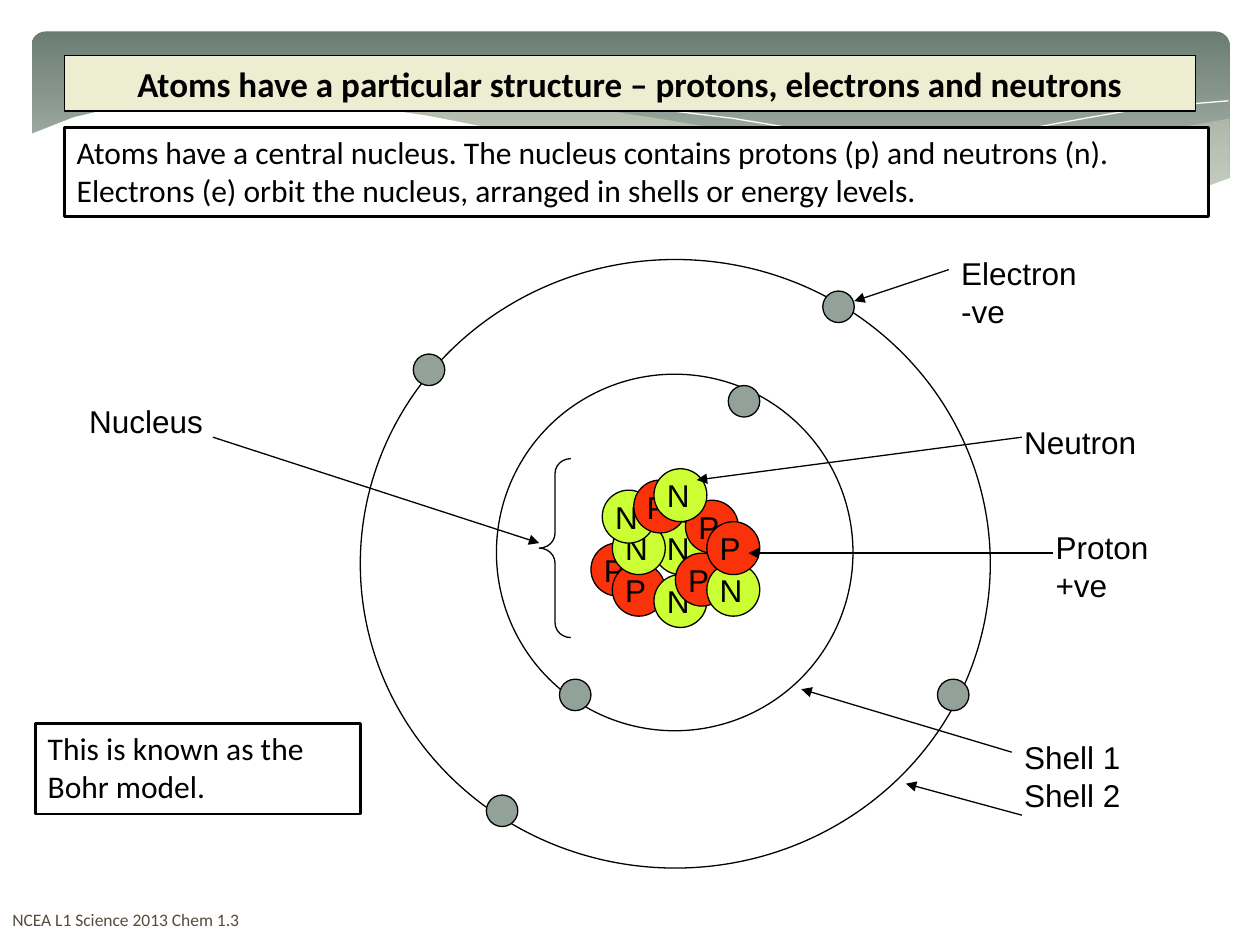
from lxml import etree
from pptx import Presentation
from pptx import util as u
from pptx.dml.color import RGBColor
from pptx.enum import shapes, text
from pptx.oxml import parse_xml
from pptx.oxml.ns import qn

Inches, Pt = u.Inches, u.Pt
KIND = shapes.MSO_SHAPE
BLACK, WHITE, CREAM = "000000", "FFFFFF", "ECEDD1"
RED, LIME, GREY = "FA320A", "CCFF33", "93A299"


def style(shape, fill=None, line=None, width=0.75):
    """Set fill and line by hex colour, None for neither."""
    shape.shadow.inherit = False
    for part, tone in ((shape.fill, fill), (shape.line.fill, line)):
        if tone:
            part.solid()
            part.fore_color.rgb = RGBColor.from_string(tone)
        else:
            part.background()
    if line:
        shape.line.width = Pt(width)


def write(shape, words, size=18, font="Calibri", tone=BLACK,
          align=text.PP_ALIGN.LEFT, anchor=text.MSO_ANCHOR.TOP, bold=False):
    frame = shape.text_frame
    frame.word_wrap = True
    frame.vertical_anchor = anchor
    frame.text = words
    for para in frame.paragraphs:
        para.alignment = align
        para.font.size = Pt(size)
        para.font.name = font
        para.font.bold = bold
        para.font.color.rgb = RGBColor.from_string(tone)


deck = Presentation()
deck.slide_width, deck.slide_height = Inches(10), Inches(7.5)
slide = deck.slides.add_slide(deck.slide_layouts[5])
items = slide.shapes

# Header band with waves
band = items.add_shape(KIND.ROUNDED_RECTANGLE, Inches(0.25), Inches(0.25),
                       Inches(9.51), Inches(1.56))
band.adjustments[0] = 0.071
style(band)
band.fill.gradient()
band.fill.gradient_angle = 270
for stop, (place, tone) in zip(band.fill.gradient_stops,
                               ((0, "6B7D72"), (0.9, "BEC7C2"))):
    stop.position = place
    stop.color.rgb = RGBColor.from_string(tone)

# Points, fill, line, opacity in percent
waves = [
    ([(9.76, 0.94), (9.48, 0.99), (9.21, 1.04), (8.91, 1.1), (8.61, 1.18),
      (8.05, 1.31), (7.53, 1.43), (7.06, 1.52), (6.61, 1.6), (6.91, 1.64),
      (7.32, 1.68), (7.69, 1.71), (8.03, 1.72), (8.35, 1.72), (8.63, 1.7),
      (8.89, 1.66), (9.13, 1.62), (9.35, 1.56), (9.63, 1.47), (9.76, 1.41)],
     CREAM, None, 29),
    ([(8.93, 1.67), (8.66, 1.64), (8.07, 1.54), (7.41, 1.42), (6.68, 1.26),
      (6.13, 1.12), (5.69, 1.02), (5.28, 0.95), (4.89, 0.89), (4.42, 0.83),
      (3.99, 0.8), (3.61, 0.8), (3.28, 0.81), (2.86, 0.86), (3.23, 0.9),
      (3.62, 0.97), (4.04, 1.06), (4.49, 1.16), (5.3, 1.35), (5.84, 1.46),
      (6.34, 1.56), (6.8, 1.63), (7.22, 1.68), (7.61, 1.71), (7.96, 1.73),
      (8.28, 1.73), (8.57, 1.71)],
     CREAM, None, 40),
    ([(3.09, 0.9), (3.28, 0.86), (3.53, 0.84), (3.87, 0.82), (4.16, 0.81),
      (4.5, 0.82), (4.89, 0.84), (5.33, 0.88), (5.82, 0.94), (6.36, 1.03),
      (6.95, 1.14), (7.6, 1.28), (8.31, 1.45), (9.07, 1.66)],
     None, WHITE, 100),
    ([(6.13, 1.51), (6.53, 1.41), (6.95, 1.3), (7.48, 1.17), (8.06, 1.04),
      (8.66, 0.93), (8.95, 0.88), (9.24, 0.84), (9.51, 0.82), (9.75, 0.8)],
     None, WHITE, 100),
    ([(9.77, 1.41), (9.5, 1.51), (9.2, 1.59), (8.87, 1.66), (8.5, 1.7),
      (8.09, 1.71), (7.61, 1.7), (7.08, 1.65), (6.48, 1.56), (5.79, 1.44),
      (5.03, 1.28), (4.47, 1.14), (3.91, 1.02), (3.4, 0.92), (2.92, 0.85),
      (2.5, 0.81), (2.11, 0.78), (1.77, 0.78), (1.46, 0.79), (1.19, 0.82),
      (0.95, 0.85), (0.76, 0.89), (0.59, 0.93), (0.46, 0.98), (0.36, 1.02),
      (0.23, 1.07), (0.23, 2.24), (9.77, 2.24)],
     WHITE, None, 100),
]
for points, fill, line, share in waves:
    dots = [(Inches(x), Inches(y)) for x, y in points]
    path = items.build_freeform(*dots[0])
    path.add_line_segments(dots[1:], close=fill is not None)
    wave = path.convert_to_shape()
    style(wave, fill, line, 0)
    if share < 100:
        tint = wave.fill._xPr.find(qn("a:solidFill"))[0]
        etree.SubElement(tint, qn("a:alpha")).set("val", str(share * 1000))

# Title, brought in front of the band
title = items.title
items.element.append(title.element)
title.left, title.top = Inches(0.51), Inches(0.44)
title.width, title.height = Inches(8.98), Inches(0.44)
style(title, CREAM, BLACK)
write(title, "Atoms have a particular structure – protons, electrons and neutrons",
      20, align=text.PP_ALIGN.CENTER, anchor=text.MSO_ANCHOR.MIDDLE, bold=True)

# Framed notes
for x, y, w, h, fill, words in (
    (0.28, 5.74, 2.58, 0.72, None, "This is known as the Bohr model."),
    (0.51, 1.01, 9.08, 0.71, WHITE,
     "Atoms have a central nucleus. The nucleus contains protons (p) and "
     "neutrons (n). Electrons (e) orbit the nucleus, arranged in shells or "
     "energy levels."),
):
    note = items.add_shape(KIND.RECTANGLE, Inches(x), Inches(y), Inches(w), Inches(h))
    style(note, fill, BLACK, 1.5)
    write(note, words)

# Nucleus, from back to front
for sign, x, y in (
    ("P", 4.69, 4.31), ("P", 4.86, 4.47), ("N", 5.19, 4.14), ("N", 5.19, 4.56),
    ("N", 4.86, 4.14), ("P", 5.36, 4.39), ("N", 4.78, 3.89), ("P", 5.03, 3.81),
    ("P", 5.44, 3.97), ("N", 5.61, 4.47), ("N", 5.19, 3.72), ("P", 5.61, 4.14),
):
    ball = items.add_shape(KIND.OVAL, Inches(x), Inches(y), Inches(0.42), Inches(0.42))
    style(ball, RED if sign == "P" else LIME, BLACK)
    write(ball, sign, font="Arial")
    frame = ball.text_frame
    frame.word_wrap = False
    frame.margin_left = Inches(0.04)
    frame.margin_top = frame.margin_right = frame.margin_bottom = 0

# Shells, then electrons
rings = [(3.94, 2.97, 2.83, 2.83, None), (2.86, 2.06, 5, 4.83, None)]
rings += [(x, y, 0.25, 0.25, GREY) for x, y in (
    (5.78, 3.06), (4.44, 5.39), (6.53, 2.31),
    (3.86, 6.31), (3.28, 2.81), (7.44, 5.39))]
for x, y, w, h, fill in rings:
    ring = items.add_shape(KIND.OVAL, Inches(x), Inches(y), Inches(w), Inches(h))
    style(ring, fill, BLACK)

brace = items.add_shape(KIND.LEFT_BRACE, Inches(4.28), Inches(3.64),
                        Inches(0.25), Inches(1.42))
brace.adjustments[0] = 0.472
style(brace, None, BLACK)

# Labels and their arrows
for words, x, y, w, h in (
    ("Electron -ve", 7.53, 1.97, 1.42, 0.7),
    ("Nucleus", 0.61, 3.14, 1.83, 0.4),
    ("Neutron", 8.03, 3.31, 1.25, 0.4),
    ("Proton +ve", 8.28, 4.14, 1.17, 0.7),
    ("Shell 1\nShell 2", 8.03, 5.81, 1.5, 0.85),
):
    label = items.add_textbox(Inches(x), Inches(y), Inches(w), Inches(h))
    write(label, words, font="Arial")

for ends in (
    (7.53, 2.14, 6.78, 2.39), (1.69, 3.47, 4.28, 4.31), (8.11, 3.47, 5.53, 3.81),
    (8.36, 4.39, 5.94, 4.39), (8.03, 5.97, 6.36, 5.47), (8.11, 6.47, 7.19, 6.22),
):
    arrow = items.add_connector(shapes.MSO_CONNECTOR.STRAIGHT, *map(Inches, ends))
    arrow.line.width = Pt(0.75)
    arrow.line.color.rgb = RGBColor.from_string(BLACK)
    etree.SubElement(arrow.line._get_or_add_ln(), qn("a:tailEnd")).set("type", "triangle")
    etree.SubElement(arrow.element.spPr, qn("a:effectLst"))

foot = items.add_textbox(0, Inches(7.1), Inches(3.17), Inches(0.4))
write(foot, "NCEA L1 Science 2013 Chem 1.3", 10, tone="564B3C",
      anchor=text.MSO_ANCHOR.MIDDLE)

deck.save("out.pptx")
